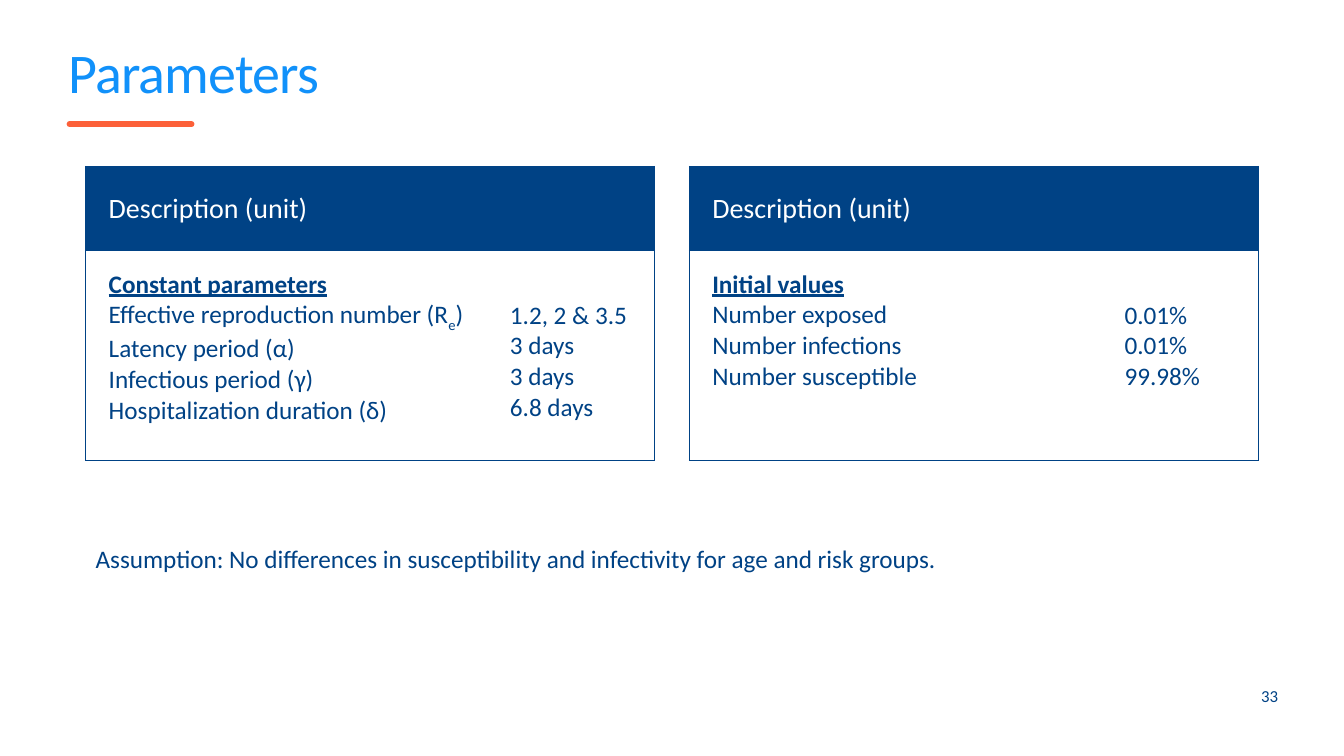
from lxml import etree
from pptx import Presentation
from pptx.dml.color import RGBColor
from pptx.enum.shapes import MSO_CONNECTOR
from pptx.enum.text import MSO_ANCHOR, MSO_AUTO_SIZE, PP_ALIGN
from pptx.oxml.ns import qn
from pptx.util import Cm, Pt

NAVY = RGBColor(0x00, 0x42, 0x85)
BLUE = RGBColor(0x11, 0x91, 0xFA)
ORANGE = RGBColor(0xFC, 0x60, 0x39)
WHITE = RGBColor(0xFF, 0xFF, 0xFF)
STRAIGHT = MSO_CONNECTOR.STRAIGHT
MIDDLE = MSO_ANCHOR.MIDDLE
RIGHT = PP_ALIGN.RIGHT
GROW = MSO_AUTO_SIZE.SHAPE_TO_FIT_TEXT

FONT = "Calibri"
HEADER_HEIGHT, BODY_HEIGHT = 2.13, 5.28
CELL_MARGIN, CELL_LEFT = 0.46, 0.58
HEADING_LINE = 0.78  # one line of body text

PANELS = [
    # left, column widths, heading, labels, values
    (2.16, (10.11, 4.22), "Constant parameters",
     [("Effective reproduction number (R", "e", ")"), ("Latency period (α)",),
      ("Infectious period (γ)",), ("Hospitalization duration (δ)",)],
     [("1.2, 2 & 3.5",), ("3 days",), ("3 days",), ("6.8 days",)]),
    (17.37, (10.39, 3.94), "Initial values",
     [("Number exposed",), ("Number infections",), ("Number susceptible",)],
     [("0.01%",), ("0.01%",), ("99.98%",)]),
]


def style(font, size, color):
    font.name, font.size, font.bold = FONT, Pt(size), False
    font.color.rgb = color


def add_text(page, box, text, size, color):
    """Place one line of text in box (left, top, width, height)."""
    shape = page.shapes.add_textbox(*map(Cm, box))
    frame = shape.text_frame
    frame.word_wrap = True
    para = frame.paragraphs[0]
    para.text = text
    style(para.font, size, color)
    return frame


def remove_margins(frame):
    frame.margin_left = frame.margin_right = 0
    frame.margin_top = frame.margin_bottom = 0


def add_title(page, left, top, width):
    frame = add_text(page, (left, top, width, 1.83), "Parameters", 40, BLUE)
    remove_margins(frame)
    para = frame.paragraphs[0]
    para.line_spacing = 0.8
    para.runs[0].font._element.set("spc", "-60")

    # Accent line under the title
    y = Cm(top + 1.86)
    accent = page.shapes.add_connector(STRAIGHT, Cm(left + 0.02), y, Cm(left + 3.1), y)
    accent.line.color.rgb = ORANGE
    accent.line.width = Pt(4)
    accent.line._get_or_add_ln().set("cap", "rnd")
    etree.SubElement(accent._element.spPr, qn("a:effectLst"))


def set_borders(cell, sides):
    """Draw the named sides in navy and clear the others."""
    properties = cell._tc.get_or_add_tcPr()
    for side in "LRTB":
        line = etree.SubElement(properties, qn("a:ln" + side), w=str(Pt(0.5)))
        if side in sides:
            fill = etree.SubElement(line, qn("a:solidFill"))
            etree.SubElement(fill, qn("a:srgbClr"), val=str(NAVY))
        else:
            etree.SubElement(line, qn("a:noFill"))


def fill_lines(cell, lines):
    """Write one paragraph a line; the second part of a line is a subscript."""
    frame = cell.text_frame
    for index, parts in enumerate(lines):
        para = frame.add_paragraph() if index else frame.paragraphs[0]
        style(para.font, 18, NAVY)
        for position, part in enumerate(parts):
            span = para.add_run()
            span.text = part
            if position == 1:
                span.font._element.set("baseline", "-25000")


def add_panel(page, left, top, widths, heading, labels, values):
    frame = page.shapes.add_table(2, 2, Cm(left), Cm(top), Cm(sum(widths)),
                                  Cm(HEADER_HEIGHT + BODY_HEIGHT))
    table = frame.table
    table.first_row = table.horz_banding = False
    for column, width in zip(table.columns, widths):
        column.width = Cm(width)
    for row, height in zip(table.rows, (HEADER_HEIGHT, BODY_HEIGHT)):
        row.height = Cm(height)

    # Margins, borders and fills
    for row in range(2):
        for column in range(2):
            cell = table.cell(row, column)
            cell.margin_left = Cm(CELL_LEFT)
            cell.margin_right = cell.margin_top = cell.margin_bottom = Cm(CELL_MARGIN)
            set_borders(cell, "LR"[column] + "T" + ("B" if row else ""))
            if row:
                cell.fill.background()
            else:
                cell.fill.solid()
                cell.fill.fore_color.rgb = NAVY

    # Header
    header = table.cell(0, 0)
    header.vertical_anchor = MIDDLE
    header.text = "Description (unit)"
    style(header.text_frame.paragraphs[0].font, 20, WHITE)

    # Labels under an underlined heading, values starting one line lower
    label_cell, value_cell = table.cell(1, 0), table.cell(1, 1)
    fill_lines(label_cell, [(heading,)] + labels)
    heading_font = label_cell.text_frame.paragraphs[0].font
    heading_font.bold = heading_font.underline = True
    value_cell.margin_top = Cm(CELL_MARGIN + HEADING_LINE)
    fill_lines(value_cell, values)


def add_assumption(page, left, top):
    frame = add_text(
        page, (left, top, 21.82, 1.02),
        "Assumption: No differences in susceptibility and infectivity for age and risk groups.",
        18, NAVY)
    frame.word_wrap = False
    frame.auto_size = GROW


def add_page_number(page, left, top):
    frame = add_text(page, (left, top, 1.02, 0.69), "33", 12, NAVY)
    remove_margins(frame)
    frame.vertical_anchor = MIDDLE
    para = frame.paragraphs[0]
    para.alignment = RIGHT
    para.space_after = Pt(6)


def main():
    deck = Presentation()
    deck.slide_width, deck.slide_height = Cm(33.87), Cm(19.05)
    page = deck.slides.add_slide(deck.slide_layouts[6])
    add_title(page, 1.73, 1.27, 30.48)
    for left, *content in PANELS:
        add_panel(page, left, 4.19, *content)
    add_assumption(page, 2.16, 13.56)
    add_page_number(page, 31.19, 17.2)
    deck.save("out.pptx")


if __name__ == "__main__":
    main()
